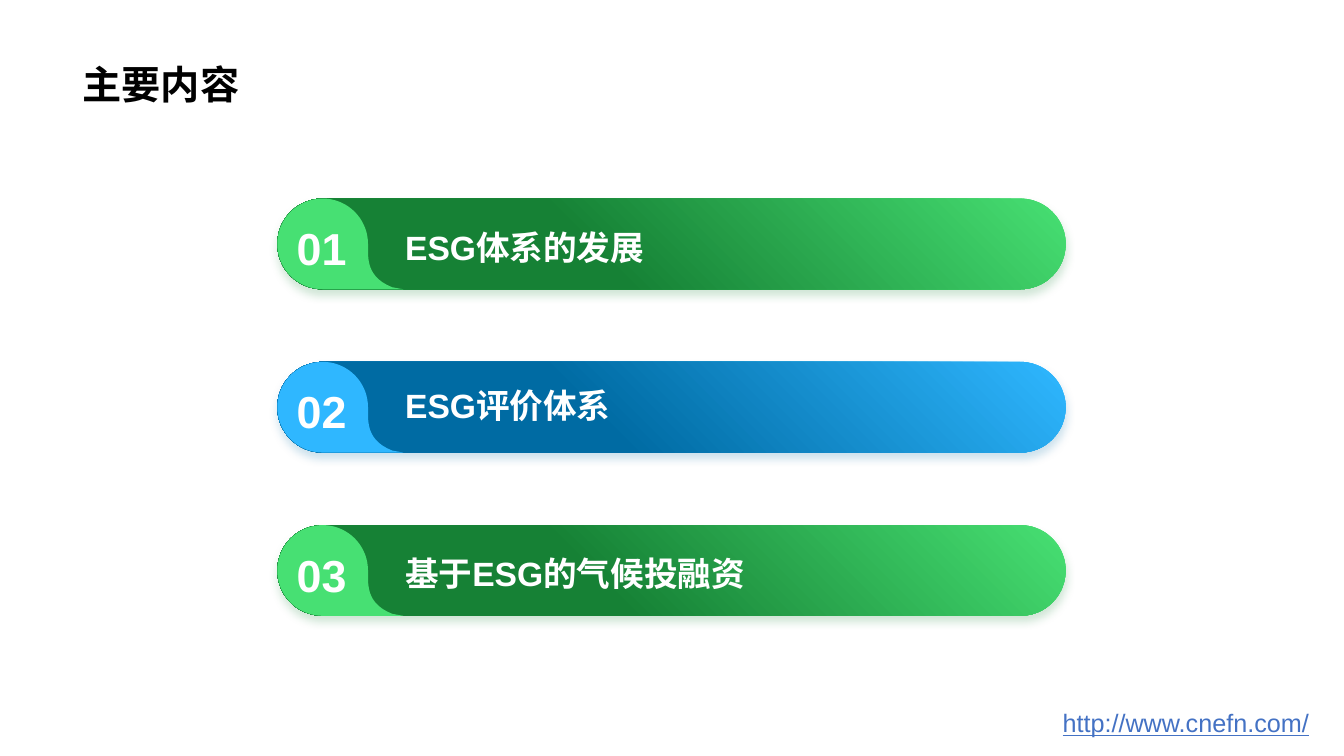
import math
from dataclasses import dataclass

import pptx
import pptx.dml.color
import pptx.enum.shapes
import pptx.enum.text
import pptx.oxml
import pptx.util
from pptx.util import Inches


@dataclass(frozen=True)
class Theme:
    font: str = "Arial"
    black: str = "000000"
    white: str = "FFFFFF"
    link: str = "4472C4"
    green: tuple = ("47E073", "168135")
    blue: tuple = ("2FB7FF", "006BA3")
    title_size: int = 28
    label_size: int = 24
    number_size: int = 32
    link_size: int = 18


theme = Theme()


def color(value):
    return pptx.dml.color.RGBColor.from_string(value)


def write(shape, text, size, text_color, frame_format, **font_format):
    frame = shape.text_frame
    for name, value in frame_format.items():
        setattr(frame, name, value)
    paragraph = frame.paragraphs[0]
    paragraph.text = text
    font = paragraph.runs[0].font
    font.color.rgb = color(text_color)
    font_format = {"name": theme.font, "size": pptx.util.Pt(size), **font_format}
    for name, value in font_format.items():
        setattr(font, name, value)
    return paragraph


presentation = pptx.Presentation()
presentation.slide_width = Inches(13.33)
presentation.slide_height = Inches(7.5)
slide = presentation.slides.add_slide(presentation.slide_layouts[5])
shapes = slide.shapes
align = pptx.enum.text.PP_ALIGN
anchor = pptx.enum.text.MSO_ANCHOR

# Title
title = shapes.title
title.left, title.top = Inches(0.72), Inches(0)
title.width, title.height = Inches(11.88), Inches(1.12)
paragraph = write(title, "主要内容", theme.title_size, theme.black,
                  {"vertical_anchor": anchor.BOTTOM}, bold=True)
paragraph.alignment = align.LEFT
paragraph.line_spacing = 0.9

# Web address
address = shapes.add_textbox(Inches(10.44), Inches(6.97), Inches(2.74), Inches(0.4))
write(address, "http://www.cnefn.com/", theme.link_size, theme.link,
      {"word_wrap": True}, underline=True)

# Badge outline: a round left end running into a curved tail
radius = 0.45
outline = []
for degrees in range(90, 361, 5):
    angle = math.radians(degrees)
    outline.append((radius * (1 + math.cos(angle)), radius * (1 + math.sin(angle))))
tail = [(0.9, 0.51), (0.9, 0.63), (0.91, 0.79), (1.14, 0.88)]
for step in range(13):
    t = step / 12
    weights = [(1 - t) ** 3, 3 * t * (1 - t) ** 2, 3 * t ** 2 * (1 - t), t ** 3]
    outline.append(tuple(sum(weight * point[axis] for weight, point in zip(weights, tail))
                         for axis in (0, 1)))
outline.append((1.25, 0.9))

# Agenda bars
bar_left, first_top, pitch = 2.75, 1.97, 1.62
agenda = [
    ("ESG体系的发展", theme.green, 2.2),
    ("ESG评价体系", theme.blue, 3.77),
    ("基于ESG的气候投融资", theme.green, 5.44),
]
for index, (label, (light, dark), label_top) in enumerate(agenda):
    top = first_top + pitch * index

    # Gradient bar, mirrored so that its light end is at the right
    bar = shapes.add_shape(pptx.enum.shapes.MSO_SHAPE.ROUNDED_RECTANGLE,
                           Inches(bar_left), Inches(top), Inches(7.82), Inches(2 * radius))
    bar.adjustments[0] = 0.5
    bar.element.spPr.xfrm.set("flipH", "1")
    bar.line.fill.background()
    bar.fill.gradient()
    bar.fill.gradient_angle = 315
    for stop, stop_color, position in zip(bar.fill.gradient_stops, (light, dark), (0, 0.6)):
        stop.color.rgb = color(stop_color)
        stop.position = position

    # Soft shadow below the bar
    bar.shadow.inherit = False
    effects = bar.element.spPr.find(pptx.oxml.ns.qn("a:effectLst"))
    effects.append(pptx.oxml.parse_xml(
        f'<a:outerShdw {pptx.oxml.ns.nsdecls("a")} blurRad="{pptx.util.Pt(6)}" '
        f'dist="{pptx.util.Pt(4)}" dir="5400000" algn="t" rotWithShape="0">'
        f'<a:srgbClr val="{dark}"><a:alpha val="20000"/></a:srgbClr></a:outerShdw>'))

    # Badge
    points = [(Inches(bar_left + x), Inches(top + y)) for x, y in outline]
    builder = shapes.build_freeform(*points[0])
    builder.add_line_segments(points[1:], close=True)
    badge = builder.convert_to_shape()
    badge.shadow.inherit = False
    badge.fill.solid()
    badge.fill.fore_color.rgb = color(light)
    badge.line.fill.background()

    # Label and number
    label_box = shapes.add_textbox(Inches(3.92), Inches(label_top), Inches(5.77), Inches(0.5))
    write(label_box, label, theme.label_size, theme.white, {"word_wrap": True}, bold=True)
    number_box = shapes.add_textbox(Inches(2.84), Inches(top + 0.17), Inches(0.7), Inches(0.64))
    paragraph = write(number_box, f"{index + 1:02}", theme.number_size, theme.white,
                      {"word_wrap": False}, bold=True)
    paragraph.alignment = align.CENTER

presentation.save("out.pptx")
